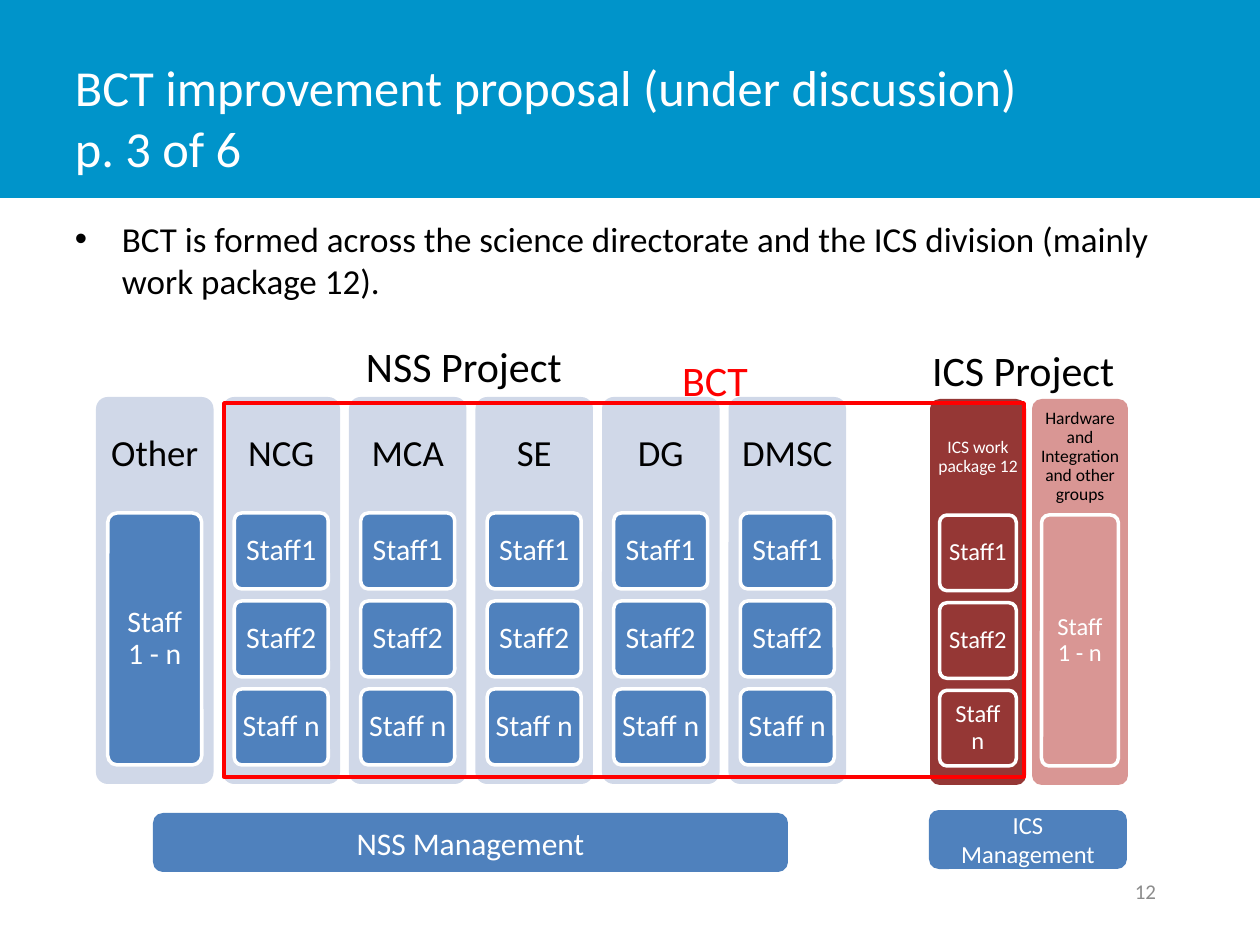
from collections import namedtuple
from dataclasses import dataclass

from lxml.etree import SubElement
from pptx import Presentation
from pptx.dml.color import RGBColor
from pptx.enum.shapes import MSO_SHAPE
from pptx.enum.text import MSO_ANCHOR, PP_ALIGN
from pptx.oxml.ns import qn
from pptx.util import Emu, Pt

Box = namedtuple("Box", "left top width height")
Palette = namedtuple("Palette", "column card heading")


@dataclass(frozen=True)
class Theme:
    font: str = "Calibri"
    band: str = "0094CA"
    blue: str = "4F81BD"
    pale: str = "D0D8E8"
    dark_red: str = "953735"
    pink: str = "D99694"
    red: str = "FF0000"
    black: str = "000000"
    white: str = "FFFFFF"
    grey: str = "8C8C8C"
    title: float = 28.8
    project: int = 24
    group: int = 21
    body: int = 20
    management: int = 18
    staff: int = 17
    small_staff: int = 14
    number: int = 12
    small_group: int = 10


THEME = Theme()
NSS = Palette(THEME.pale, THEME.blue, THEME.black)
ICS_INSIDE = Palette(THEME.dark_red, THEME.dark_red, THEME.white)
ICS_OUTSIDE = Palette(THEME.pink, THEME.pink, THEME.black)
TEAM = ["Staff1", "Staff2", "Staff n"]
EVERYONE = ["Staff 1 - n"]


def px(length):
    return Emu(round(length * 914400 / 126))


def place(box):
    return [px(length) for length in box]


def write(shape, text, size, color, align=PP_ALIGN.LEFT, anchor=MSO_ANCHOR.MIDDLE,
          inset=(12, 6), spacing=None, bullet_indent=0):
    """Fill a shape with one formatted paragraph; inset is (sides, top and bottom)."""
    frame = shape.text_frame
    frame.word_wrap = True
    frame.vertical_anchor = anchor
    frame.margin_left = frame.margin_right = px(inset[0])
    frame.margin_top = frame.margin_bottom = px(inset[1])
    paragraph = frame.paragraphs[0]
    paragraph.text = text
    paragraph.alignment = align
    if spacing:
        paragraph.line_spacing = spacing
    if bullet_indent:
        properties = paragraph._p.get_or_add_pPr()
        properties.set("marL", str(px(bullet_indent)))
        properties.set("indent", str(-px(bullet_indent)))
        SubElement(properties, qn("a:buFont"), typeface="Arial")
        SubElement(properties, qn("a:buChar"), char="•")
    for run in paragraph.runs:
        run.font.name = THEME.font
        run.font.size = Pt(size)
        run.font.color.rgb = RGBColor.from_string(color)


def add_label(slide, box, text, **style):
    write(slide.shapes.add_textbox(*place(box)), text, **style)


def add_block(slide, box, fill=None, line=None, kind=MSO_SHAPE.RECTANGLE, corner=None):
    shape = slide.shapes.add_shape(kind, *place(box))
    shape.shadow.inherit = False
    if corner is not None:
        shape.adjustments[0] = corner
    if fill:
        shape.fill.solid()
        shape.fill.fore_color.rgb = RGBColor.from_string(fill)
    else:
        shape.fill.background()
    if line:
        shape.line.color.rgb = RGBColor.from_string(line)
        shape.line.width = Pt(2)
    else:
        shape.line.fill.background()
    return shape


def add_header(slide, box):
    add_block(slide, box, fill=THEME.band)
    add_label(slide, Box(box.left + 63, box.top + 38, 984, 158),
              "BCT improvement proposal (under discussion)\vp. 3 of 6",
              size=THEME.title, color=THEME.white)


def add_column(slide, box, heading, staff, palette, heading_size, staff_size, inset):
    """Draw one group: a panel, its heading and a stack of staff cards."""
    add_block(slide, box, fill=palette.column, kind=MSO_SHAPE.ROUNDED_RECTANGLE, corner=0.1)
    heading_height = round(box.height * 0.3)
    add_label(slide, box._replace(height=heading_height), heading, size=heading_size,
              color=palette.heading, align=PP_ALIGN.CENTER, inset=(inset, inset), spacing=0.9)
    gap = 12
    stack_height = round(box.height * 0.65)
    card_height = (stack_height - gap * (len(staff) - 1)) / len(staff)
    for row, name in enumerate(staff):
        card_box = Box(box.left + box.width * 0.1,
                       box.top + heading_height + row * (card_height + gap),
                       box.width * 0.8, card_height)
        card = add_block(slide, card_box, fill=palette.card, line=THEME.white,
                         kind=MSO_SHAPE.ROUNDED_RECTANGLE, corner=0.1)
        write(card, name, size=staff_size, color=THEME.white, align=PP_ALIGN.CENTER,
              inset=(6, 5) if staff_size == THEME.staff else (5, 4), spacing=0.9)


def add_project(slide, box, groups, gap, **style):
    """Share the box equally among (heading, staff, palette) groups."""
    width = (box.width - gap * (len(groups) - 1)) / len(groups)
    for index, (heading, staff, palette) in enumerate(groups):
        column = box._replace(left=box.left + index * (width + gap), width=width)
        add_column(slide, column, heading, staff, palette, **style)


def add_management(slide, box, text, size):
    bar = add_block(slide, box, fill=THEME.blue, kind=MSO_SHAPE.ROUNDED_RECTANGLE)
    write(bar, text, size=size, color=THEME.white, align=PP_ALIGN.CENTER)


def add_project_label(slide, box, text, color=THEME.black, align=PP_ALIGN.LEFT):
    add_label(slide, box, text, size=THEME.project, color=color, align=align,
              anchor=MSO_ANCHOR.TOP)


def main():
    presentation = Presentation()
    presentation.slide_width, presentation.slide_height = px(1260), px(945)
    slide = presentation.slides.add_slide(presentation.slide_layouts[6])

    add_header(slide, Box(0, 0, 1260, 198))
    add_label(slide, Box(63, 211, 1134, 147),
              "BCT is formed across the science directorate and the ICS division "
              "(mainly work package 12).",
              size=THEME.body, color=THEME.black, anchor=MSO_ANCHOR.TOP, bullet_indent=47)
    add_label(slide, Box(874, 866, 294, 50), "12", size=THEME.number, color=THEME.grey,
              align=PP_ALIGN.RIGHT)

    nss_groups = [("Other", EVERYONE, NSS)]
    nss_groups += [(name, TEAM, NSS) for name in ("NCG", "MCA", "SE", "DG", "DMSC")]
    add_project(slide, Box(96, 397, 750, 387), nss_groups, gap=9,
                heading_size=THEME.group, staff_size=THEME.staff, inset=11)
    add_management(slide, Box(153, 813, 635, 59), "NSS Management", THEME.management)
    add_project_label(slide, Box(354, 335, 244, 63), "NSS Project")

    ics_groups = [("ICS work package 12", TEAM, ICS_INSIDE),
                  ("Hardware and Integration and other groups", EVERYONE, ICS_OUTSIDE)]
    add_project(slide, Box(930, 399, 198, 386), ics_groups, gap=6,
                heading_size=THEME.small_group, staff_size=THEME.small_staff, inset=5)

    add_block(slide, Box(224, 403, 800, 374), line=THEME.red)
    add_management(slide, Box(929, 810, 198, 59), "ICS Management", THEME.small_staff)
    add_project_label(slide, Box(596, 349, 238, 63), "BCT", THEME.red, PP_ALIGN.CENTER)
    add_project_label(slide, Box(920, 339, 244, 63), "ICS Project")

    presentation.save("out.pptx")


if __name__ == "__main__":
    main()
